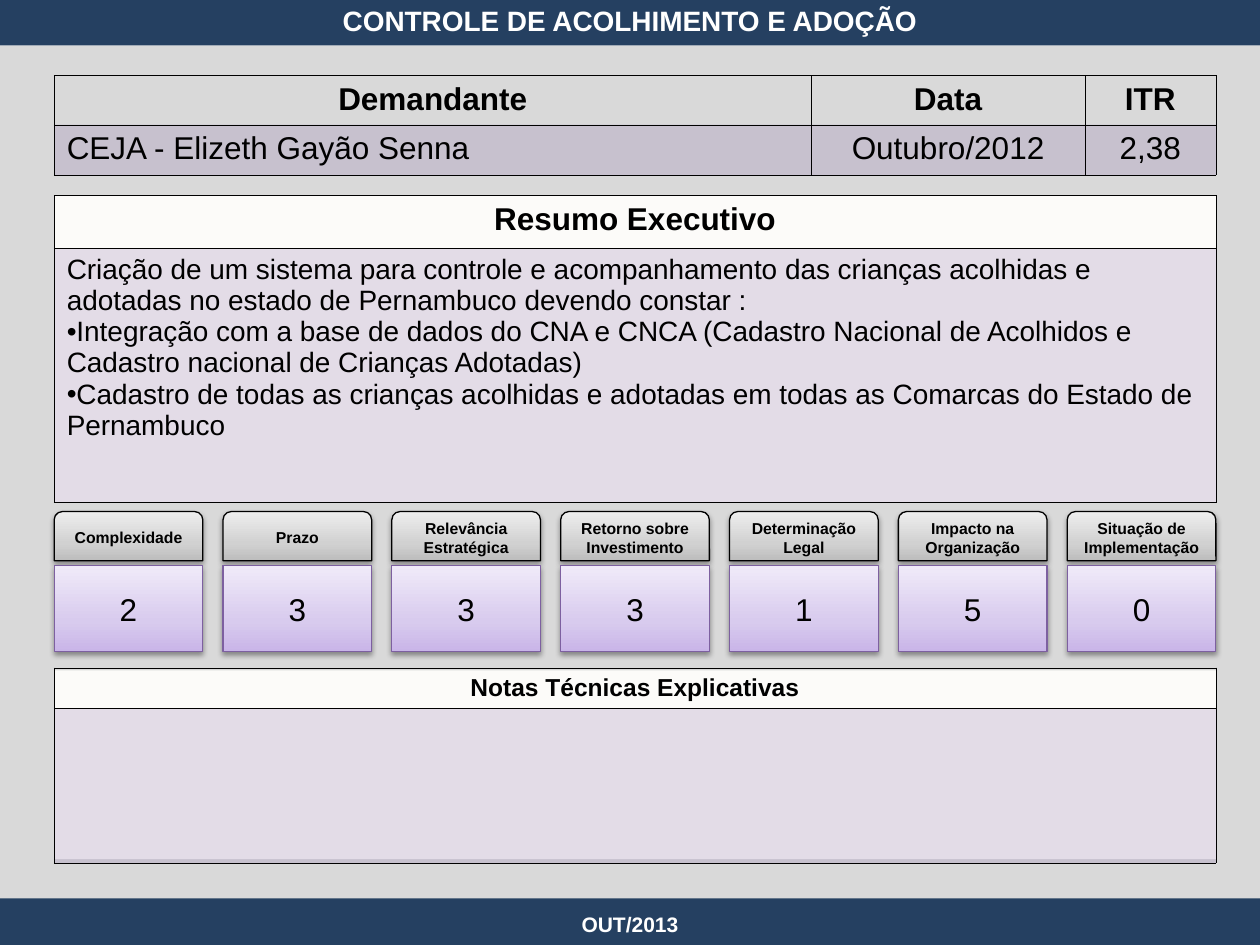
from dataclasses import dataclass
from lxml import etree
from pptx import Presentation, util as u
from pptx.dml.color import RGBColor
from pptx.enum import shapes, text
from pptx.oxml import ns

HEADING = "CONTROLE DE ACOLHIMENTO E ADOÇÃO"
PERIOD = "OUT/2013"
REQUEST = [["Demandante", "Data", "ITR"],
           ["CEJA - Elizeth Gayão Senna", "Outubro/2012", "2,38"]]
SUMMARY_HEADING = "Resumo Executivo"
SUMMARY = [
    "Criação de um sistema para controle e acompanhamento das crianças acolhidas e "
    "adotadas no estado de Pernambuco devendo constar :",
    "Integração com a base de dados do CNA e CNCA (Cadastro Nacional de Acolhidos e "
    "Cadastro nacional de Crianças Adotadas)",
    "Cadastro de todas as crianças acolhidas e adotadas em todas as Comarcas do Estado de "
    "Pernambuco",
]
NOTES_HEADING = "Notas Técnicas Explicativas"
SCORES = [("Complexidade", 2), ("Prazo", 3), ("Relevância Estratégica", 3),
          ("Retorno sobre Investimento", 3), ("Determinação Legal", 1),
          ("Impacto na Organização", 5), ("Situação de Implementação", 0)]


@dataclass(frozen=True)
class Theme:
    font: str = "Arial"
    navy: str = "254061"
    grey: str = "D9D9D9"
    paper: str = "FCFBF9"
    purple: str = "8064A2"
    outline: str = "7D60A0"
    ink: str = "000000"
    white: str = "FFFFFF"
    silver: tuple = ((0, "BDBDBD"), (35, "D1D1D1"), (100, "EEEEEE"))
    lilac: tuple = ((0, "C9B5E8"), (35, "D8CBEE"), (100, "F0EAF9"))
    large: int = 18
    body: int = 16
    medium: int = 14
    footer: int = 12
    label: int = 9


T = Theme()
WIDTH, HEIGHT = 10, 7.5
LEFT, CONTENT = 0.43, 9.22
BAND = 0.37
CARD, LABEL_HEIGHT, SCORE_HEIGHT = 1.18, 0.39, 0.68
LABEL_TOP, SCORE_TOP = 4.06, 4.49
CENTER, MIDDLE = text.PP_ALIGN.CENTER, text.MSO_ANCHOR.MIDDLE


def rgb(value):
    return RGBColor.from_string(value)


def add(parent, tag, **attributes):
    return etree.SubElement(parent, ns.qn(tag), {k: str(v) for k, v in attributes.items()})


def add_color(parent, value, alpha=None):
    color = add(parent, "a:srgbClr", val=value)
    if alpha is not None:
        add(color, "a:alpha", val=alpha * 1000)


def add_shadow(effects, blur, distance, direction, alpha):
    shadow = add(effects, "a:outerShdw", blurRad=blur, dist=distance,
                 dir=direction * 60000, algn="ctr", rotWithShape=0)
    add_color(shadow, T.ink, alpha)


def box(left, top, width, height):
    return [u.Inches(n) for n in (left, top, width, height)]


def write(frame, lines, size, color=T.ink, bold=False, align=CENTER, bullets=False, glow=False):
    frame.text = "\n".join(lines)
    for index, paragraph in enumerate(frame.paragraphs):
        paragraph.alignment = align
        if bullets and index:
            properties = paragraph._p.get_or_add_pPr()
            properties.set("marL", "0")
            properties.set("indent", "0")
            add(properties, "a:buFont", typeface=T.font)
            add(properties, "a:buChar", char="•")
        for run in paragraph.runs:
            font = run.font
            font.name, font.size, font.bold = T.font, u.Pt(size), bold
            font.color.rgb = rgb(color)
            if glow:
                effects = add(font._element, "a:effectLst")
                add_shadow(effects, 38100, 38100, 45, 43)
                font._element.find(ns.qn("a:latin")).addprevious(effects)


def rectangle(slide, place, color=None, kind=shapes.MSO_SHAPE.RECTANGLE):
    shape = slide.shapes.add_shape(kind, *box(*place))
    shape.shadow.inherit = False
    if color:
        shape.fill.solid()
        shape.fill.fore_color.rgb = rgb(color)
        shape.line.fill.background()
    return shape


def card(slide, place, caption, stops, line, size, bold, kind):
    shape = rectangle(slide, place, kind=kind)
    shape.fill.gradient()
    gradient = shape._element.spPr.find(ns.qn("a:gradFill"))
    for child in list(gradient):
        gradient.remove(child)
    stop_list = add(gradient, "a:gsLst")
    for position, color in stops:
        add_color(add(stop_list, "a:gs", pos=position * 1000), color)
    add(gradient, "a:lin", ang=270 * 60000, scaled=0)
    shape.line.color.rgb, shape.line.width = rgb(line), u.Pt(0.75)
    add_shadow(shape._element.spPr.find(ns.qn("a:effectLst")), 40000, 20000, 90, 38)
    shape.text_frame.vertical_anchor = MIDDLE
    shape.text_frame.word_wrap = True
    write(shape.text_frame, [caption], size, bold=bold)


def style_cell(cell, tinted):
    properties = cell._tc.get_or_add_tcPr()
    if tinted:
        cell.fill.solid()
        cell.fill.fore_color.rgb = rgb(T.purple)
        add(properties.find(ns.qn("a:solidFill"))[0], "a:alpha", val=20000)
    else:
        cell.fill.background()
    for index, side in enumerate(("a:lnL", "a:lnR", "a:lnT", "a:lnB")):
        border = add(properties, side, w=u.Pt(0.25))
        add_color(add(border, "a:solidFill"), T.ink)
        properties.insert(index, border)


def grid(slide, top, columns, rows):
    table = slide.shapes.add_table(len(rows), len(columns),
                                   *box(LEFT, top, CONTENT, sum(rows))).table
    table.first_row = table.horz_banding = False
    for column, width in zip(table.columns, columns):
        column.width = u.Inches(width)
    for index, height in enumerate(rows):
        table.rows[index].height = u.Inches(height)
        for column in range(len(columns)):
            style_cell(table.cell(index, column), index > 0)
    return table


def main():
    deck = Presentation()
    deck.slide_width, deck.slide_height = u.Inches(WIDTH), u.Inches(HEIGHT)
    slide = deck.slides.add_slide(deck.slide_layouts[5])

    rectangle(slide, (0, BAND - 0.01, WIDTH, 6.85), T.grey)
    for top in (HEIGHT - BAND, -0.01):
        rectangle(slide, (0, top, WIDTH, BAND), T.navy)
    footer = slide.shapes.add_textbox(*box(0, 7.14, WIDTH, 0.39)).text_frame
    footer.word_wrap, footer.vertical_anchor = True, MIDDLE
    write(footer, [PERIOD], T.footer, T.white, True, glow=True)

    title = slide.shapes.title
    title.left, title.top, title.width, title.height = box(0, -0.11, WIDTH, 0.55)
    title.text_frame.auto_size = text.MSO_AUTO_SIZE.NONE
    title.text_frame.vertical_anchor = MIDDLE
    write(title.text_frame, [HEADING], T.body, T.white, True, glow=True)
    slide.shapes._spTree.append(title._element)

    request = grid(slide, 0.6, (6.01, 2.17, 1.04), (0.39, 0.4))
    for row, values in enumerate(REQUEST):
        for column, value in enumerate(values):
            align = text.PP_ALIGN.LEFT if row and not column else CENTER
            write(request.cell(row, column).text_frame, [value], T.large,
                  bold=row == 0, align=align)

    rectangle(slide, (LEFT, 1.55, CONTENT, 2.44), T.paper)
    summary = grid(slide, 1.55, (CONTENT,), (0.42, 2.02))
    write(summary.cell(0, 0).text_frame, [SUMMARY_HEADING], T.large, bold=True)
    write(summary.cell(1, 0).text_frame, SUMMARY, T.body,
          align=text.PP_ALIGN.LEFT, bullets=True)

    rectangle(slide, (LEFT, 5.32, CONTENT, 1.5), T.paper)
    notes = grid(slide, 5.3, (CONTENT,), (0.32, 1.23))
    write(notes.cell(0, 0).text_frame, [NOTES_HEADING], T.medium, bold=True)

    pitch = (CONTENT - CARD) / (len(SCORES) - 1)
    for index, (label, score) in enumerate(SCORES):
        left = LEFT + index * pitch
        card(slide, (left, LABEL_TOP, CARD, LABEL_HEIGHT), label, T.silver, T.ink,
             T.label, True, shapes.MSO_SHAPE.ROUND_2_SAME_RECTANGLE)
        card(slide, (left, SCORE_TOP, CARD, SCORE_HEIGHT), str(score), T.lilac, T.outline,
             T.large, False, shapes.MSO_SHAPE.RECTANGLE)

    deck.save("out.pptx")


if __name__ == "__main__":
    main()
